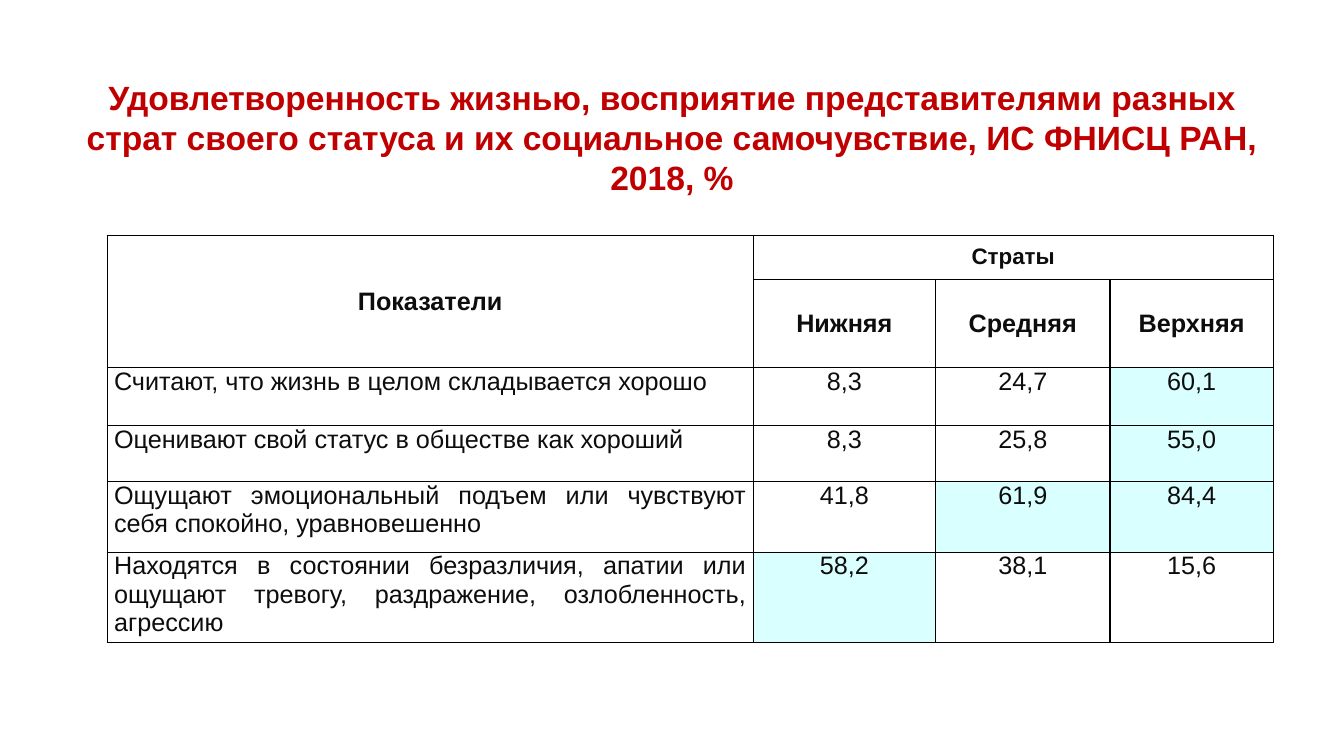
from dataclasses import dataclass

from lxml import etree
from pptx import Presentation
from pptx.dml.color import RGBColor
from pptx.enum.text import MSO_ANCHOR, PP_ALIGN
from pptx.oxml.ns import qn
from pptx.util import Pt

CENTER, JUSTIFY = PP_ALIGN.CENTER, PP_ALIGN.JUSTIFY
TOP, MIDDLE, BOTTOM = MSO_ANCHOR.TOP, MSO_ANCHOR.MIDDLE, MSO_ANCHOR.BOTTOM


@dataclass(frozen=True)
class Theme:
    font: str = "Arial"
    title_color: str = "C00000"
    text_color: str = "0D0D0D"
    border_color: str = "000000"
    cell_fill: str = "FFFFFF"
    highlight: str = "D9FFFF"
    title_size: int = 24
    text_size: int = 18
    group_size: int = 16


THEME = Theme()

TITLE = ("Удовлетворенность жизнью, восприятие представителями разных страт "
         "своего статуса и их социальное самочувствие, ИС ФНИСЦ РАН, 2018, %")
STRATA = ["Нижняя", "Средняя", "Верхняя"]
# Indicator, value for each stratum, highlighted strata
INDICATORS = [
    ("Считают, что жизнь в целом складывается хорошо",
     ["8,3", "24,7", "60,1"], {"Верхняя"}),
    ("Оценивают свой статус в обществе как хороший",
     ["8,3", "25,8", "55,0"], {"Верхняя"}),
    ("Ощущают эмоциональный подъем или чувствуют себя спокойно, уравновешенно",
     ["41,8", "61,9", "84,4"], {"Средняя", "Верхняя"}),
    ("Находятся в состоянии безразличия, апатии или ощущают тревогу, "
     "раздражение, озлобленность, агрессию",
     ["58,2", "38,1", "15,6"], {"Нижняя"}),
]
COLUMN_WIDTHS = [461.5, 130.3, 124.6, 116.6]
ROW_HEIGHTS = [31.5, 63.2, 41, 40.3, 50.4, 55.4]


def write(frame, text, size, color, bold, align):
    para = frame.paragraphs[0]
    para.alignment = align
    run = para.add_run()
    run.text = text
    run.font.name = THEME.font
    run.font.size = Pt(size)
    run.font.bold = bold
    run.font.color.rgb = RGBColor.from_string(color)


def add_title(page):
    box = page.shapes.add_textbox(Pt(48), Pt(54.7), Pt(864), Pt(90))
    frame = box.text_frame
    frame.word_wrap = True
    frame.vertical_anchor = BOTTOM
    write(frame, TITLE, THEME.title_size, THEME.title_color, True, CENTER)


def style_cell(cell, fill):
    """Set the margins, the four borders and the fill of a cell."""
    cell.margin_left = cell.margin_right = Pt(5)
    cell.margin_top = cell.margin_bottom = Pt(0)
    properties = cell._tc.get_or_add_tcPr()
    for side in ("a:lnL", "a:lnR", "a:lnT", "a:lnB"):
        line = etree.SubElement(properties, qn(side), w=str(Pt(1)))
        solid = etree.SubElement(line, qn("a:solidFill"))
        etree.SubElement(solid, qn("a:srgbClr"), val=THEME.border_color)
    cell.fill.solid()
    cell.fill.fore_color.rgb = RGBColor.from_string(fill)


def fill_header(cell, text, size=THEME.text_size):
    cell.vertical_anchor = MIDDLE
    write(cell.text_frame, text, size, THEME.text_color, True, CENTER)


def fill_body(cell, text, align):
    cell.vertical_anchor = TOP
    write(cell.text_frame, text, THEME.text_size, THEME.text_color, False, align)


def add_strata_table(page):
    table = page.shapes.add_table(
        len(ROW_HEIGHTS), len(COLUMN_WIDTHS), Pt(76.5), Pt(168),
        Pt(sum(COLUMN_WIDTHS)), Pt(sum(ROW_HEIGHTS))).table
    table.first_row = table.horz_banding = False
    for column, width in zip(table.columns, COLUMN_WIDTHS):
        column.width = Pt(width)
    for row, height in zip(table.rows, ROW_HEIGHTS):
        row.height = Pt(height)
    for cell in table.iter_cells():
        style_cell(cell, THEME.cell_fill)

    table.cell(0, 0).merge(table.cell(1, 0))
    table.cell(0, 1).merge(table.cell(0, len(STRATA)))
    fill_header(table.cell(0, 0), "Показатели")
    fill_header(table.cell(0, 1), "Страты", THEME.group_size)
    for column, stratum in enumerate(STRATA, 1):
        fill_header(table.cell(1, column), stratum)

    for row, (indicator, values, highlighted) in enumerate(INDICATORS, 2):
        fill_body(table.cell(row, 0), indicator, JUSTIFY)
        for column, (stratum, value) in enumerate(zip(STRATA, values), 1):
            cell = table.cell(row, column)
            fill_body(cell, value, CENTER)
            if stratum in highlighted:
                cell.fill.fore_color.rgb = RGBColor.from_string(THEME.highlight)


def main():
    deck = Presentation()
    deck.slide_width, deck.slide_height = Pt(960), Pt(540)
    page = deck.slides.add_slide(deck.slide_layouts[6])
    add_title(page)
    add_strata_table(page)
    deck.save("out.pptx")


if __name__ == "__main__":
    main()
